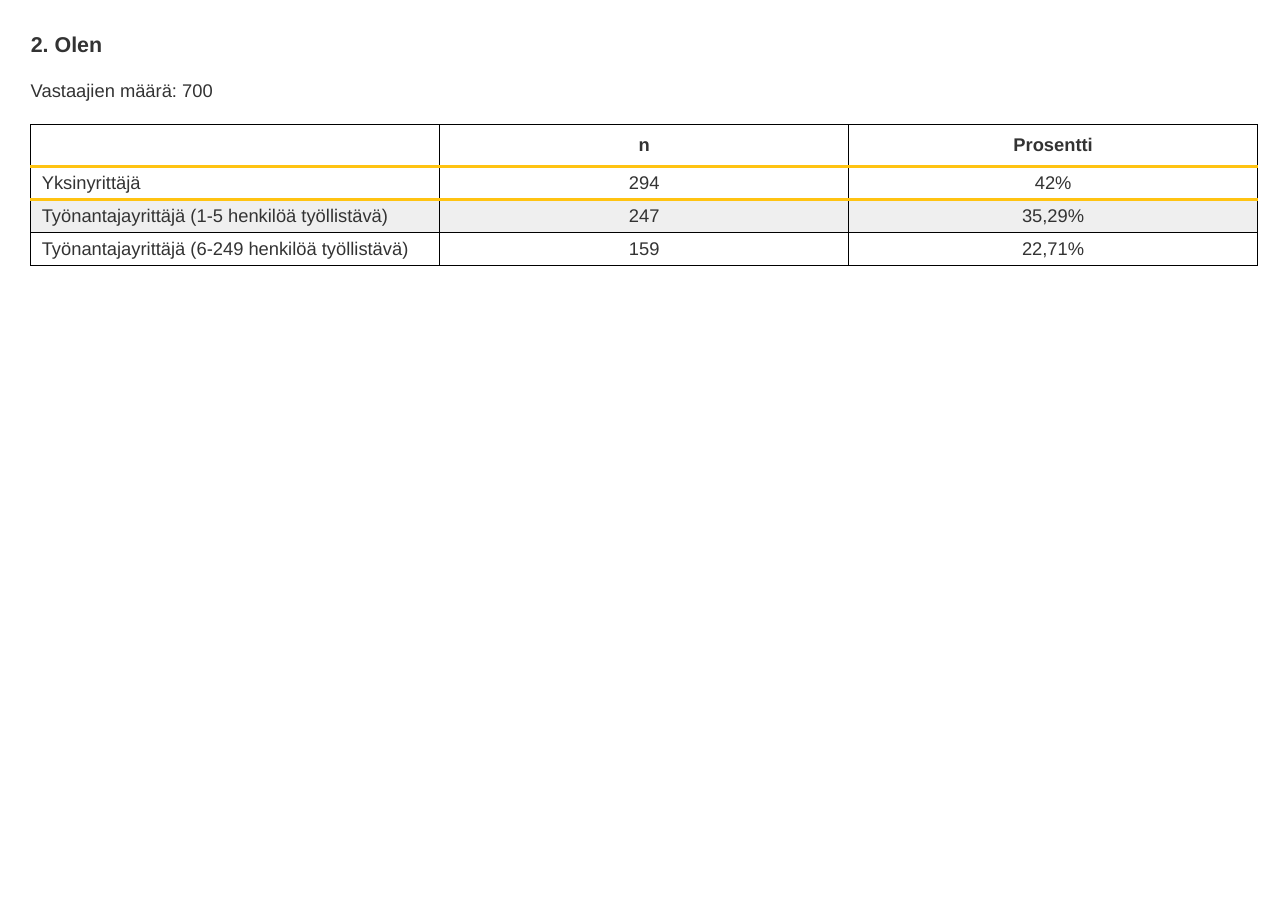
from dataclasses import dataclass

from lxml import etree
from pptx import Presentation
from pptx import util as u
from pptx.dml.color import RGBColor
from pptx.enum import text
from pptx.oxml import ns

# Content
TITLE = "2. Olen"
RESPONDENTS = "Vastaajien määrä: 700"
ROWS = [
    ("", "n", "Prosentti"),
    ("Yksinyrittäjä", "294", "42%"),
    ("Työnantajayrittäjä (1-5 henkilöä työllistävä)", "247", "35,29%"),
    ("Työnantajayrittäjä (6-249 henkilöä työllistävä)", "159", "22,71%"),
]
SHADED_ROW = 2
ACCENT_EDGES = (1, 2)  # horizontal rules, counted from the table top


@dataclass(frozen=True)
class Theme:
    font: str = "Arial"
    ink: str = "333333"
    line: str = "000000"
    accent: str = "FFC311"
    plain: str = "FFFFFF"
    shade: str = "EFEFEF"
    title_size: int = 14
    body_size: int = 12
    line_width: float = 0.75
    accent_width: float = 2


THEME = Theme()
LEFT, WIDTH = u.Cm(0.71), u.Cm(28.32)
COLUMN_WIDTH, ROW_HEIGHT = u.Cm(9.43), u.Cm(0.76)


def write(frame, words, size, bold=False, align=text.PP_ALIGN.LEFT):
    para = frame.paragraphs[0]
    para.alignment = align
    span = para.add_run()
    span.text = words
    span.font.name = THEME.font
    span.font.size = u.Pt(size)
    span.font.bold = bold
    span.font.color.rgb = RGBColor.from_string(THEME.ink)


def place_line(box, top, height, words, size, bold=False):
    box.left, box.top, box.width, box.height = LEFT, top, WIDTH, height
    frame = box.text_frame
    frame.word_wrap = True
    frame.auto_size = text.MSO_AUTO_SIZE.NONE
    frame.vertical_anchor = text.MSO_ANCHOR.TOP
    frame.margin_left = frame.margin_right = 0
    frame.margin_top = frame.margin_bottom = 0
    write(frame, words, size, bold)


def draw_border(cell, side, color, width):
    props = cell._tc.get_or_add_tcPr()
    line = etree.SubElement(props, ns.qn(f"a:ln{side}"), w=str(u.Pt(width)))
    fill = etree.SubElement(line, ns.qn("a:solidFill"))
    etree.SubElement(fill, ns.qn("a:srgbClr"), val=color)


def format_cell(cell, row):
    edges = {"L": None, "R": None, "T": row, "B": row + 1}
    for side, edge in edges.items():
        if edge in ACCENT_EDGES:
            draw_border(cell, side, THEME.accent, THEME.accent_width)
        else:
            draw_border(cell, side, THEME.line, THEME.line_width)
    cell.fill.solid()
    color = THEME.shade if row == SHADED_ROW else THEME.plain
    cell.fill.fore_color.rgb = RGBColor.from_string(color)
    cell.vertical_anchor = text.MSO_ANCHOR.MIDDLE


def add_results(page):
    columns = len(ROWS[0])
    frame = page.shapes.add_table(
        len(ROWS), columns, LEFT, u.Cm(2.87),
        COLUMN_WIDTH * columns, ROW_HEIGHT * len(ROWS))
    table = frame.table
    table.first_row = table.horz_banding = False
    for row, values in enumerate(ROWS):
        table.rows[row].height = ROW_HEIGHT
        for column, value in enumerate(values):
            cell = table.cell(row, column)
            format_cell(cell, row)
            align = text.PP_ALIGN.CENTER if column else text.PP_ALIGN.LEFT
            write(cell.text_frame, value, THEME.body_size, row == 0, align)
    for column in table.columns:
        column.width = COLUMN_WIDTH


def main():
    deck = Presentation()
    deck.slide_width, deck.slide_height = u.Cm(29.7), u.Cm(21)
    page = deck.slides.add_slide(deck.slide_layouts[5])

    # Heading and respondent count
    place_line(page.shapes.title, u.Cm(0.71), u.Cm(0.6),
               TITLE, THEME.title_size, bold=True)
    count = page.shapes.add_textbox(LEFT, 0, WIDTH, 0)
    place_line(count, u.Cm(1.83), u.Cm(0.5), RESPONDENTS, THEME.body_size)

    # Results table
    add_results(page)
    deck.save("out.pptx")


if __name__ == "__main__":
    main()
